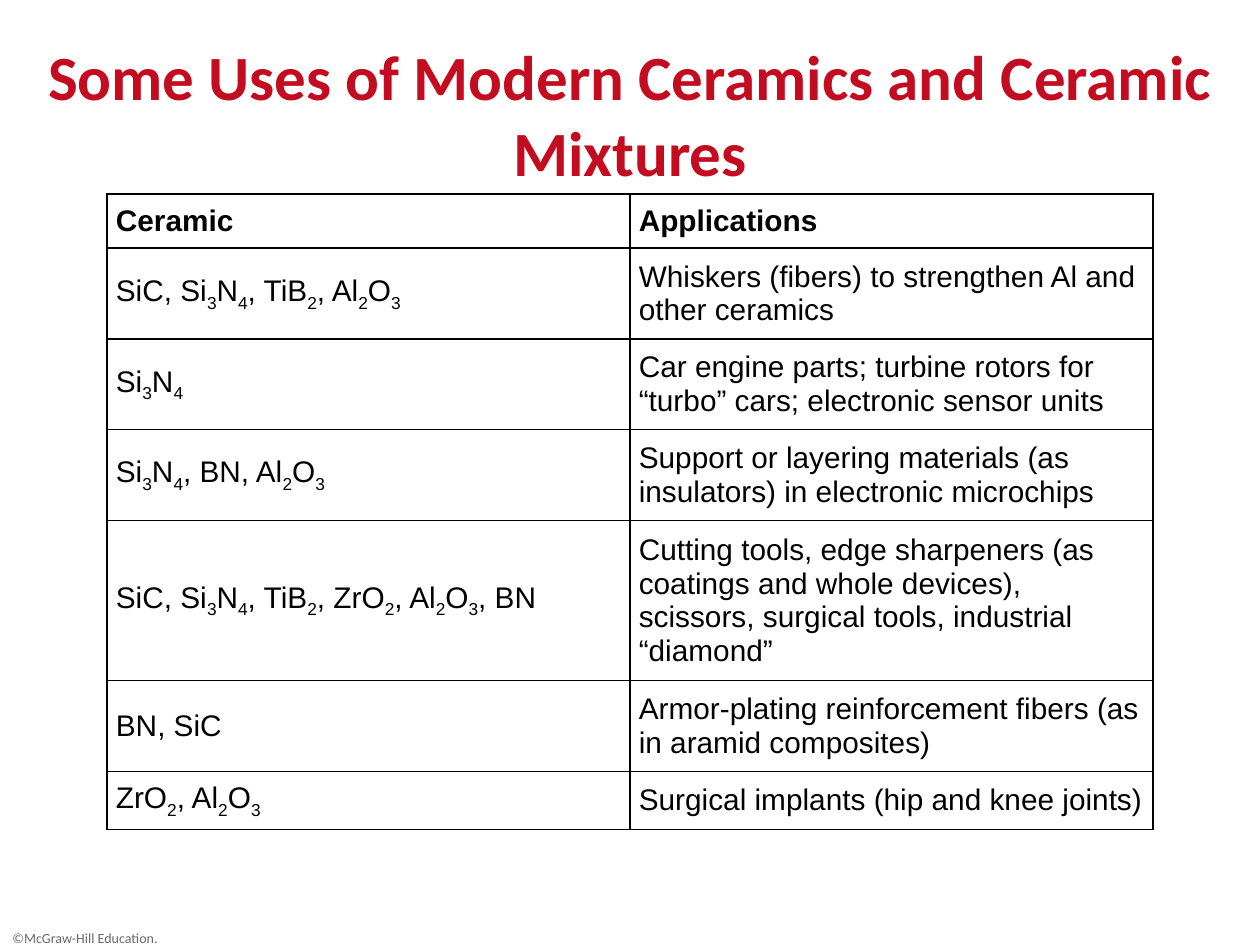
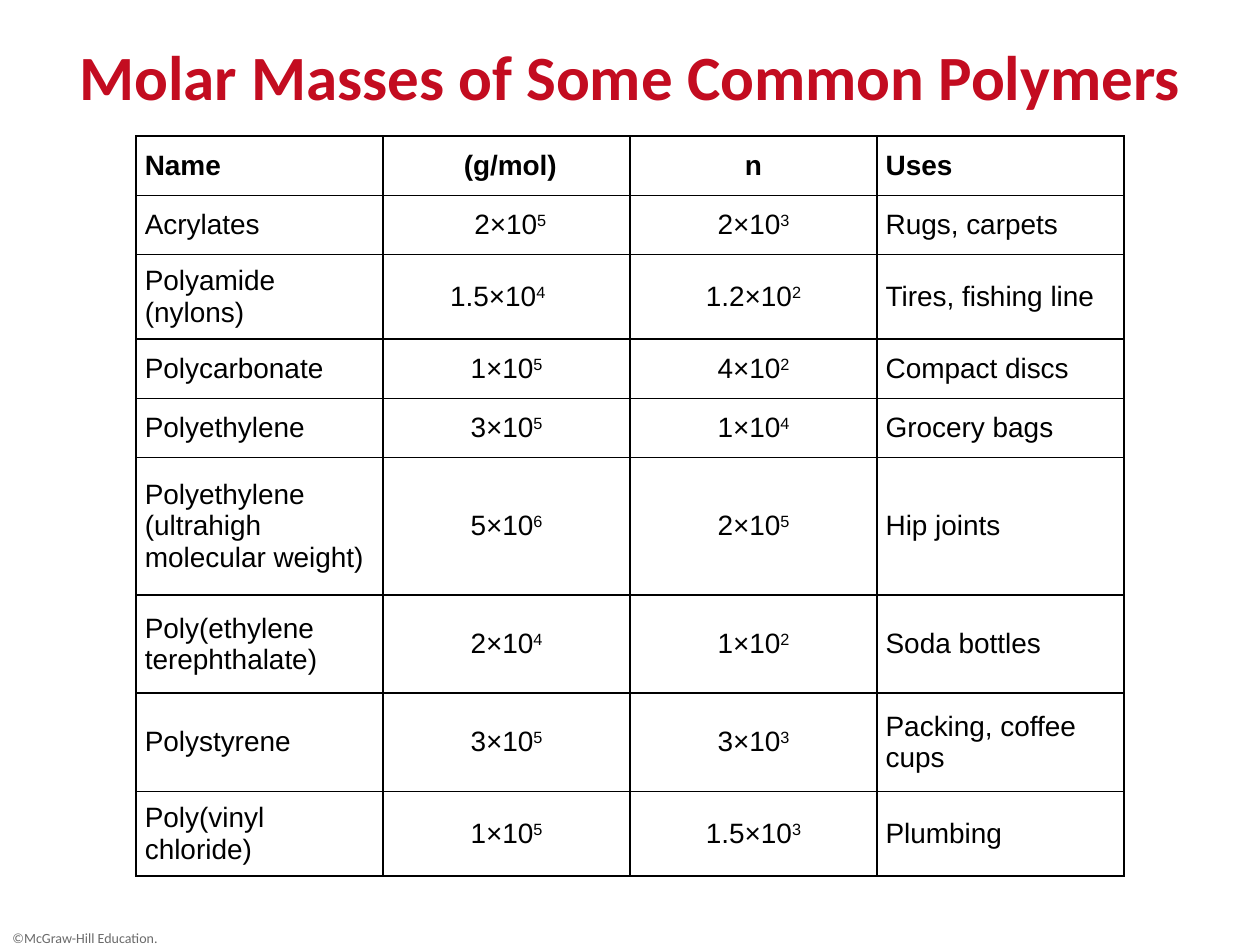
from lxml.etree import SubElement
from pptx import Presentation
from pptx.dml.color import RGBColor
from pptx.enum.text import MSO_ANCHOR as Anchor, PP_ALIGN as Align
from pptx.oxml.ns import qn
from pptx.util import Inches, Pt

RED, GREY, BLACK = "C30C20", "6A6A6A", "000000"
WIDTH, HEIGHT = 10, 7.5
CELL_MARGIN = Inches(0.07)
BASELINES = {"_": "-25000", "^": "30000"}

ceramics = dict(
    title="Some Uses of Modern Ceramics and Ceramic Mixtures",
    top=1.54, column=4.15, size=17, centred=(), mark="_", nudges={},
    heights=[0.43, 0.72, 0.72, 0.72, 1.01, 0.72, 0.43],
    rows=[
        ("Ceramic", "Applications"),
        ("SiC, Si_3N_4, TiB_2, Al_2O_3",
         "Whiskers (fibers) to strengthen Al and other ceramics"),
        ("Si_3N_4",
         "Car engine parts; turbine rotors for “turbo” cars; electronic sensor units"),
        ("Si_3N_4, BN, Al_2O_3",
         "Support or layering materials (as insulators) in electronic microchips"),
        ("SiC, Si_3N_4, TiB_2, ZrO_2, Al_2O_3, BN",
         "Cutting tools, edge sharpeners (as coatings and whole devices), "
         "scissors, surgical tools, industrial “diamond”"),
        ("BN, SiC", "Armor-plating reinforcement fibers (as in aramid composites)"),
        ("ZrO_2, Al_2O_3", "Surgical implants (hip and knee joints)"),
    ])

polymers = dict(
    title="Molar Masses of Some Common Polymers",
    top=1.08, column=1.96, size=16, centred=(1, 2), mark="^",
    # Extra left and right margins of cells set off centre, by (row, column)
    nudges={(0, 1): (0.06, 0), (1, 1): (0.06, 0), (2, 1): (0, 0.14)},
    heights=[0.47] * 5 + [1.09, 0.78, 0.78, 0.47],
    rows=[
        ("Name", "(g/mol)", "n", "Uses"),
        ("Acrylates", "2×10^5", "2×10^3", "Rugs, carpets"),
        ("Polyamide (nylons)", "1.5×10^4", "1.2×10^2", "Tires, fishing line"),
        ("Polycarbonate", "1×10^5", "4×10^2", "Compact discs"),
        ("Polyethylene", "3×10^5", "1×10^4", "Grocery bags"),
        ("Polyethylene (ultrahigh molecular weight)", "5×10^6", "2×10^5", "Hip joints"),
        ("Poly(ethylene terephthalate)", "2×10^4", "1×10^2", "Soda bottles"),
        ("Polystyrene", "3×10^5", "3×10^3", "Packing, coffee cups"),
        ("Poly(vinyl chloride)", "1×10^5", "1.5×10^3", "Plumbing"),
    ])


def style(paragraph, face, size, color, bold=False):
    font = paragraph.font
    font.name, font.size, font.bold = face, Pt(size), bold
    font.color.rgb = RGBColor.from_string(color)


def write_marked(paragraph, text, mark):
    """Add runs, raising or lowering the one character after each mark."""
    plain, *marked = text.split(mark)
    paragraph.add_run().text = plain
    for piece in marked:
        shifted = paragraph.add_run()
        shifted.text = piece[0]
        shifted._r.get_or_add_rPr().set("baseline", BASELINES[mark])
        if piece[1:]:
            paragraph.add_run().text = piece[1:]


prs = Presentation()
prs.slide_width, prs.slide_height = Inches(WIDTH), Inches(HEIGHT)
title_only = prs.slide_layouts[5]

for topic in (ceramics, polymers):
    slide = prs.slides.add_slide(title_only)

    copyright_line = slide.shapes.add_textbox(0, Inches(HEIGHT - 0.17), Inches(1.5), Inches(0.17))
    copyright_line.text_frame.word_wrap = True
    copyright_line.text_frame.text = "©McGraw-Hill Education."
    style(copyright_line.text_frame.paragraphs[0], "Calibri", 8, GREY)

    title = slide.shapes.title
    title.left, title.top = 0, Inches(0.25)
    title.width, title.height = Inches(WIDTH), Inches(0.67)
    title.text_frame.text = topic["title"]
    title.text_frame.vertical_anchor = Anchor.TOP
    heading = title.text_frame.paragraphs[0]
    heading.alignment = Align.CENTER
    style(heading, "Calibri", 36, RED, bold=True)

    rows, heights = topic["rows"], topic["heights"]
    columns = len(rows[0])
    table_width = columns * topic["column"]
    table = slide.shapes.add_table(
        len(rows), columns, Inches((WIDTH - table_width) / 2), Inches(topic["top"]),
        Inches(table_width), Inches(sum(heights))).table
    table.first_row = table.horz_banding = False

    for r, (texts, height) in enumerate(zip(rows, heights)):
        table.rows[r].height = Inches(height)
        for c, text in enumerate(texts):
            cell = table.cell(r, c)
            extra_left, extra_right = topic["nudges"].get((r, c), (0, 0))
            cell.margin_left = CELL_MARGIN + Inches(extra_left)
            cell.margin_right = CELL_MARGIN + Inches(extra_right)
            cell.margin_top = cell.margin_bottom = CELL_MARGIN
            cell.vertical_anchor = Anchor.MIDDLE

            entry = cell.text_frame.paragraphs[0]
            write_marked(entry, text, topic["mark"])
            entry.alignment = Align.CENTER if c in topic["centred"] else Align.LEFT
            style(entry, "Arial", topic["size"], BLACK, bold=r == 0)

            properties = cell._tc.get_or_add_tcPr()
            for side in ("a:lnL", "a:lnR", "a:lnT", "a:lnB"):
                border = SubElement(properties, qn(side), w=str(Pt(1)))
                SubElement(SubElement(border, qn("a:solidFill")), qn("a:srgbClr"), val=BLACK)
            cell.fill.background()

prs.save("out.pptx")
